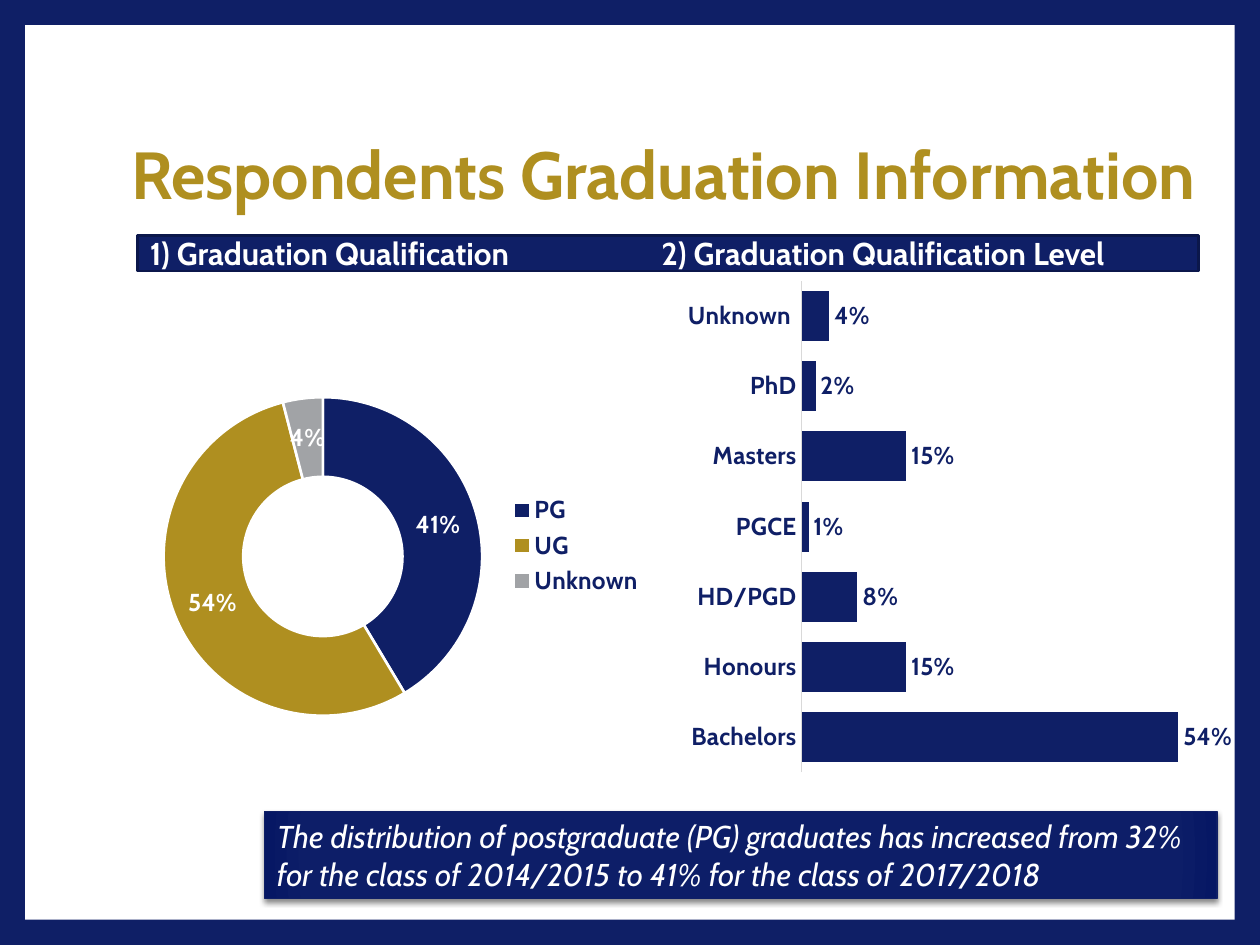
from typing import NamedTuple

from pptx import Presentation
from pptx.chart.data import CategoryChartData
from pptx.dml.color import RGBColor
from pptx.enum.chart import XL_CHART_TYPE, XL_LABEL_POSITION, XL_LEGEND_POSITION, XL_TICK_MARK
from pptx.enum.shapes import MSO_SHAPE
from pptx.enum.text import MSO_ANCHOR, PP_ALIGN
from pptx.oxml import parse_xml
from pptx.oxml.ns import nsdecls, qn
from pptx.util import Inches, Pt

RING = XL_CHART_TYPE.DOUGHNUT
BARS = XL_CHART_TYPE.BAR_CLUSTERED
OUTSIDE = XL_LABEL_POSITION.OUTSIDE_END
RIGHT = XL_LEGEND_POSITION.RIGHT
NO_TICK = XL_TICK_MARK.NONE
RECT = MSO_SHAPE.RECTANGLE
MIDDLE = MSO_ANCHOR.MIDDLE
LEFT = PP_ALIGN.LEFT

FONT = "Cabin"
COLORS = {
    "navy": "0F1F66", "gold": "AF8F20", "gray": "A1A3A6", "white": "FFFFFF",
    "edge": "0B174B", "rule": "D9D9D9", "mid": "0D1E68", "deep": "061764",
}


class Box(NamedTuple):
    x: float
    y: float
    w: float
    h: float

    def place(self) -> list:
        return [Inches(v) for v in self]


class Graph(NamedTuple):
    kind: int
    box: Box
    data: dict[str, float]
    label: str


RING_GRAPH = Graph(RING, Box(0.94, 2.15, 4.27, 4.36),
                   {"PG": 0.41, "UG": 0.54, "Unknown": 0.04}, "white")
BAR_GRAPH = Graph(BARS, Box(5.37, 2.15, 4.41, 4.06),
                  {"Bachelors": 0.54, "Honours": 0.15, "HD/PGD": 0.08, "PGCE": 0.01,
                   "Masters": 0.15, "PhD": 0.02, "Unknown ": 0.04}, "navy")


def rgb(name: str) -> RGBColor:
    return RGBColor.from_string(COLORS[name])


def style(font, size: float, color: str, bold: bool = False, italic: bool = False) -> None:
    font.name, font.size = FONT, Pt(size)
    font.bold, font.italic = bold, italic
    font.color.rgb = rgb(color)


def write(shape, text: str, *, size: float, color: str, bold: bool = False,
          italic: bool = False, space: float = 1.0, tab: float = 0) -> None:
    frame = shape.text_frame
    frame.word_wrap = True
    frame.vertical_anchor = MIDDLE
    para = frame.paragraphs[0]
    para.alignment, para.line_spacing = LEFT, space
    if tab:
        para._p.get_or_add_pPr().append(parse_xml(
            f'<a:tabLst {nsdecls("a")}><a:tab pos="{Inches(tab)}" algn="l"/></a:tabLst>'))
    run = para.add_run()
    run.text = text
    style(run.font, size, color, bold, italic)


def add_rect(slide, box: Box, fill: str, line: str = "", width: float = 0):
    shape = slide.shapes.add_shape(RECT, *box.place())
    shape.shadow.inherit = False
    shape.fill.solid()
    shape.fill.fore_color.rgb = rgb(fill)
    if line:
        shape.line.color.rgb = rgb(line)
        shape.line.width = Pt(width)
    else:
        shape.line.fill.background()
    return shape


def add_glow(shape) -> None:
    """Give a shape a radial navy gradient and a soft shadow below."""
    stops = "".join(f'<a:gs pos="{pos * 1000}"><a:srgbClr val="{COLORS[name]}"/></a:gs>'
                    for pos, name in ((0, "navy"), (90, "mid"), (100, "deep")))
    props = shape._element.spPr
    props.replace(props.find(qn("a:solidFill")), parse_xml(
        f'<a:gradFill {nsdecls("a")} rotWithShape="1"><a:gsLst>{stops}</a:gsLst>'
        '<a:path path="circle"><a:fillToRect l="100000" t="100000" r="100000" b="100000"/>'
        '</a:path></a:gradFill>'))
    props.replace(props.find(qn("a:effectLst")), parse_xml(
        f'<a:effectLst {nsdecls("a")}><a:outerShdw blurRad="{Pt(3)}" dist="{Pt(2)}" '
        'dir="5400000" rotWithShape="0"><a:srgbClr val="000000"><a:alpha val="45000"/>'
        '</a:srgbClr></a:outerShdw></a:effectLst>'))


def add_graph(slide, graph: Graph):
    data = CategoryChartData(number_format="0%")
    data.categories = list(graph.data)
    data.add_series("Series 1", list(graph.data.values()))
    chart = slide.shapes.add_chart(graph.kind, *graph.box.place(), data).chart
    chart.has_title = chart.has_legend = False
    style(chart.font, 14, "navy", bold=True)
    plot = chart.plots[0]
    plot.has_data_labels = True
    labels = plot.data_labels
    labels.show_value, labels.show_percentage = True, False
    labels.number_format, labels.number_format_is_linked = "0%", False
    style(labels.font, 14, graph.label, bold=True)
    return chart


def set_plot(chart, box: Box) -> None:
    """Fix the inner plot area, in fractions of the chart."""
    area = chart._chartSpace.chart.plotArea
    for old in area.findall(qn("c:layout")):
        area.remove(old)
    parts = "".join(f'<c:{key} val="{val}"/>' for key, val in box._asdict().items())
    area.insert(0, parse_xml(
        f'<c:layout {nsdecls("c")}><c:manualLayout><c:layoutTarget val="inner"/>'
        f'<c:xMode val="edge"/><c:yMode val="edge"/>{parts}</c:manualLayout></c:layout>'))


def add_ring(slide) -> None:
    chart = add_graph(slide, RING_GRAPH)
    set_plot(chart, Box(0.08, 0.23, 0.6, 0.58))
    chart.has_legend = True
    chart.legend.position = RIGHT
    chart.legend.include_in_layout = False
    style(chart.legend.font, 14, "navy", bold=True)
    plot = chart.plots[0]
    plot.vary_by_categories = True
    for i, name in enumerate(("navy", "gold", "gray")):
        part = plot.series[0].points[i].format
        part.fill.solid()
        part.fill.fore_color.rgb = rgb(name)
        part.line.color.rgb = rgb("white")
        part.line.width = Pt(1.5)


def add_bars(slide) -> None:
    chart = add_graph(slide, BAR_GRAPH)
    plot = chart.plots[0]
    plot.vary_by_categories = False
    plot.gap_width = 40
    plot.data_labels.position = OUTSIDE
    fill = plot.series[0].format.fill
    fill.solid()
    fill.fore_color.rgb = rgb("navy")
    cats, vals = chart.category_axis, chart.value_axis
    cats.major_tick_mark = cats.minor_tick_mark = NO_TICK
    cats.format.line.color.rgb = rgb("rule")
    cats.format.line.width = Pt(0.75)
    style(cats.tick_labels.font, 14, "navy", bold=True)
    vals.visible = vals.has_major_gridlines = False
    vals.minimum_scale, vals.maximum_scale = 0, 0.6


def main() -> None:
    deck = Presentation()
    deck.slide_width, deck.slide_height = Inches(10), Inches(7.5)
    slide = deck.slides.add_slide(deck.slide_layouts[5])

    # Navy border around a white page, behind the title
    slide.background.fill.solid()
    slide.background.fill.fore_color.rgb = rgb("navy")
    page = add_rect(slide, Box(0.2, 0.2, 9.6, 7.1), "white")
    slide.shapes._spTree.insert(2, page._element)

    # Title
    title = slide.shapes.title
    title.left, title.top, title.width, title.height = Box(0.94, 0.67, 9.54, 1.48).place()
    write(title, "Respondents Graduation Information", size=38, color="gold",
          bold=True, space=0.9)

    # Heading band over both charts
    band = add_rect(slide, Box(1.09, 1.87, 8.42, 0.28), "navy", "edge", 1.5)
    write(band, "1) Graduation Qualification\t2) Graduation Qualification Level",
          size=18, color="white", bold=True, tab=4.06)

    # Charts
    add_ring(slide)
    add_bars(slide)

    # Finding
    note = add_rect(slide, Box(2.1, 6.44, 7.56, 0.69), "navy", "navy", 0.79)
    add_glow(note)
    write(note, "The distribution of postgraduate (PG) graduates has increased from 32% "
          "for the class of 2014/2015 to 41% for the class of 2017/2018",
          size=18, color="white", italic=True)

    deck.save("out.pptx")


if __name__ == "__main__":
    main()
